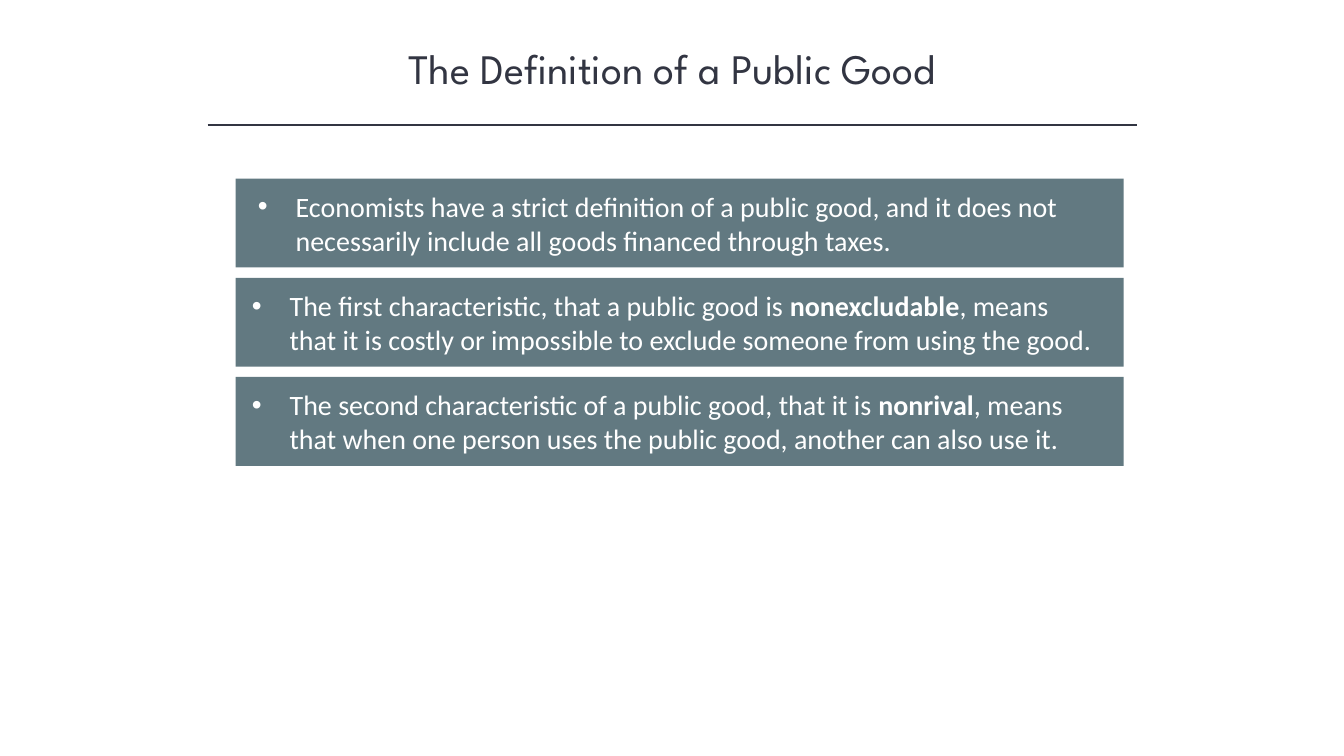
from dataclasses import dataclass

from lxml.etree import SubElement
from pptx import Presentation
from pptx.dml.color import RGBColor
from pptx.enum.shapes import MSO_CONNECTOR, MSO_SHAPE
from pptx.enum.text import MSO_ANCHOR, PP_ALIGN
from pptx.oxml.ns import qn
from pptx.util import Cm, Pt


@dataclass(frozen=True)
class Theme:
    ink: RGBColor = RGBColor(0x32, 0x35, 0x42)
    panel: RGBColor = RGBColor(0x62, 0x79, 0x81)
    panel_text: RGBColor = RGBColor(0xFF, 0xFF, 0xFF)
    title_font: str = "League Spartan"
    body_font: str = "Calibri"
    title_size: Pt = Pt(30)
    body_size: Pt = Pt(20)
    rule_width: Pt = Pt(1)


THEME = Theme()

# Each statement: distance of its bullet from the panel edge, then (text, bold) runs
STATEMENTS = [
    (Cm(0.56), [("Economists have a strict definition of a public good, and it does not "
                 "necessarily include all goods financed through taxes.", False)]),
    (Cm(0.41), [("The first characteristic, that a public good is ", False),
                ("nonexcludable", True),
                (", means that it is costly or impossible to exclude someone "
                 "from using the good.", False)]),
    (Cm(0.41), [("The second characteristic of a public good, that it is ", False),
                ("nonrival", True),
                (", means that when one person uses the public good, "
                 "another can also use it.", False)]),
]


def add_run(paragraph, text, font_name, size, color, bold=False):
    run = paragraph.add_run()
    run.text = text
    run.font.name = font_name
    run.font.size = size
    run.font.bold = bold
    run.font.color.rgb = color


def add_bullet(paragraph, indent):
    properties = paragraph._p.get_or_add_pPr()
    properties.set("marL", str(indent))
    properties.set("indent", str(-indent))
    SubElement(properties, qn("a:buFont"), typeface="Arial")
    SubElement(properties, qn("a:buChar"), char="•")


def add_heading(slide, left, top, width, height):
    # Title
    title = slide.shapes.add_textbox(left, top, width, height)
    title.text_frame.word_wrap = True
    paragraph = title.text_frame.paragraphs[0]
    paragraph.alignment = PP_ALIGN.CENTER
    add_run(paragraph, "The Definition of a Public Good",
            THEME.title_font, THEME.title_size, THEME.ink)

    # Rule below the title
    rule_left, rule_y = left + Cm(0.99), top + Cm(2.21)
    rule = slide.shapes.add_connector(MSO_CONNECTOR.STRAIGHT, rule_left, rule_y,
                                      rule_left + Cm(23.42), rule_y)
    rule.line.color.rgb = THEME.ink
    rule.line.width = THEME.rule_width
    SubElement(rule._element.spPr, qn("a:effectLst"))


def add_statement(slide, left, top, width, height, bullet_inset, runs):
    panel = slide.shapes.add_shape(MSO_SHAPE.RECTANGLE, left, top, width, height)
    panel.shadow.inherit = False
    panel.fill.solid()
    panel.fill.fore_color.rgb = THEME.panel
    panel.line.fill.background()

    frame = panel.text_frame
    frame.word_wrap = True
    frame.vertical_anchor = MSO_ANCHOR.MIDDLE
    frame.margin_top = frame.margin_bottom = Cm(0)
    frame.margin_left = bullet_inset
    frame.margin_right = Cm(1.2) - bullet_inset

    paragraph = frame.paragraphs[0]
    paragraph.alignment = PP_ALIGN.LEFT
    add_bullet(paragraph, Cm(0.95))
    for text, bold in runs:
        add_run(paragraph, text, THEME.body_font, THEME.body_size,
                THEME.panel_text, bold)


def add_statements(slide, left, top, width, height):
    gap = Cm(0.26)
    count = len(STATEMENTS)
    panel_height = (height - gap * (count - 1)) // count
    for index, (bullet_inset, runs) in enumerate(STATEMENTS):
        panel_top = top + index * (panel_height + gap)
        add_statement(slide, left, panel_top, width, panel_height, bullet_inset, runs)


def main():
    presentation = Presentation()
    presentation.slide_width = Cm(33.87)
    presentation.slide_height = Cm(19.05)
    slide = presentation.slides.add_slide(presentation.slide_layouts[6])
    add_heading(slide, Cm(4.24), Cm(0.94), Cm(25.4), Cm(1.55))
    add_statements(slide, Cm(5.94), Cm(4.5), Cm(22.38), Cm(7.24))
    presentation.save("out.pptx")


if __name__ == "__main__":
    main()
